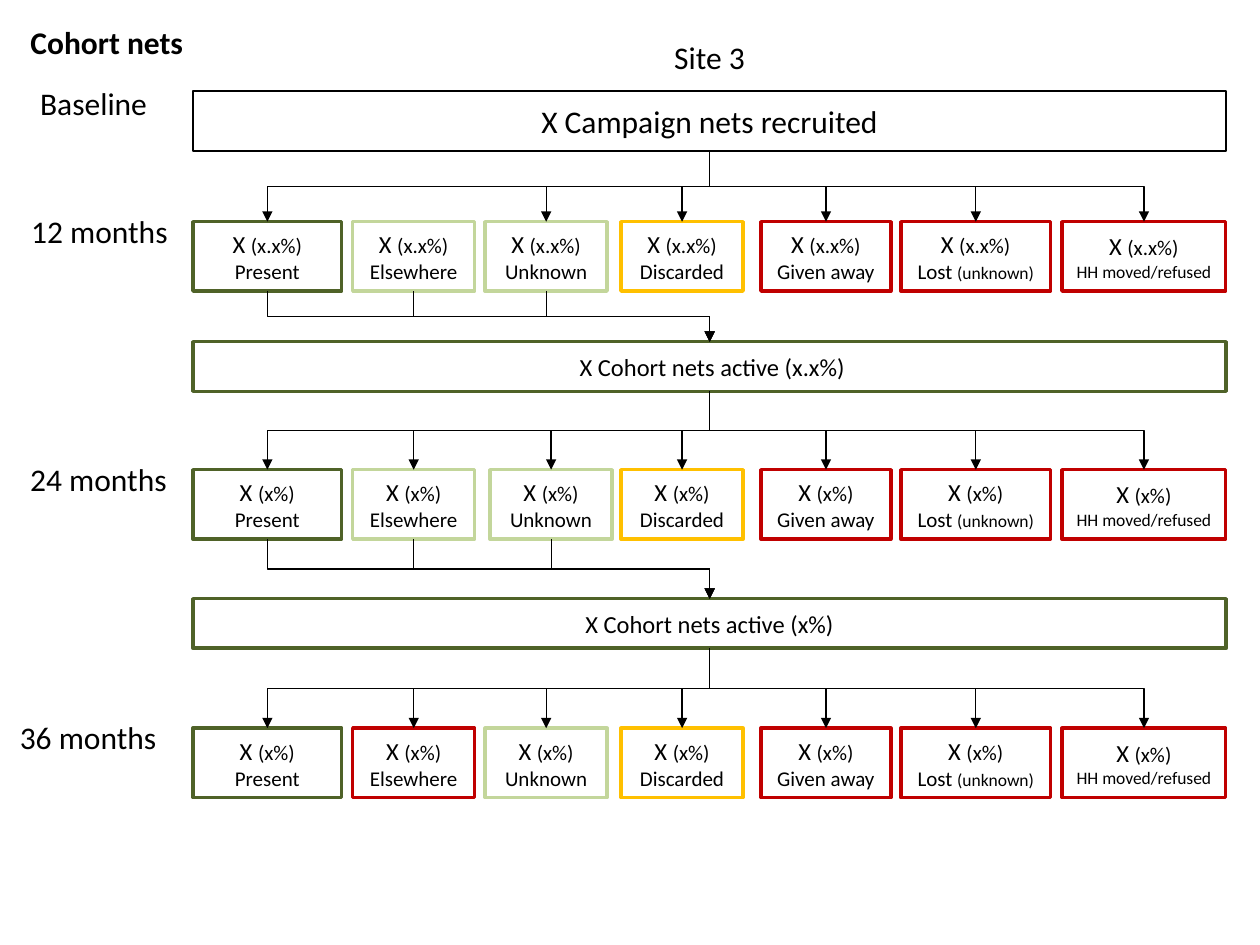
from lxml.etree import SubElement
from pptx import Presentation
from pptx.dml.color import RGBColor
from pptx.enum.shapes import MSO_CONNECTOR, MSO_SHAPE
from pptx.enum.text import MSO_ANCHOR, MSO_AUTO_SIZE, PP_ALIGN
from pptx.oxml.ns import qn
from pptx.util import Cm, Pt

THEME = {
    "font": "Calibri",
    "ink": "000000", "paper": "FFFFFF",
    "green": "4F6228", "light": "C3D69B", "gold": "FFC000", "red": "C00000",
    "head": 18, "count": 14, "label": 12, "small": 10,
    "thin": 0.75, "rule": 1, "frame": 2,
}

TITLE = "Cohort nets"
SITE = "Site 3"

# label runs (text, size), left, width, colour; lengths in cm
FATES = [
    ([("Present", "label")], 3.89, 3.0, "green"),
    ([("Elsewhere", "label")], 7.11, 2.46, "light"),
    ([("Unknown", "label")], 9.78, 2.46, "light"),
    ([("Discarded", "label")], 12.52, 2.46, "gold"),
    ([("Given away", "label")], 15.34, 2.62, "red"),
    ([("Lost ", "label"), ("(unknown)", "small")], 18.16, 3.02, "red"),
    ([("HH moved/refused", "small")], 21.41, 3.3, "red"),
]
ACTIVE = 3  # the first fates feed the next bar

# text, top, height, line colour, line width, type size
BARS = [
    ("X Campaign nets recruited", 1.83, 1.22, "ink", "rule", "head"),
    (" X Cohort nets active (x.x%)", 6.89, 1.0, "green", "frame", "count"),
    ("X Cohort nets active (x%)", 12.07, 1.0, "green", "frame", "count"),
]
# top, share, fates without an arrow, shifts in cm, colour changes
ROWS = [
    (4.47, "(x.x%)", {1}, {}, {}),
    (9.47, "(x%)", set(), {2: 0.1}, {}),
    (14.68, "(x%)", set(), {}, {1: "red"}),
]
TIMES = [("Baseline", 0.56, 1.57), ("12 months", 0.38, 4.14),
         ("24 months", 0.36, 9.14), ("36 months", 0.15, 14.35)]

LEFT, WIDE = 3.89, 20.83
MID = LEFT + WIDE / 2
TALL = 1.4


def tint(name):
    return RGBColor.from_string(THEME[name])


def write(frame, lines, align=PP_ALIGN.CENTER, bold=False):
    """Fill a frame; each line is a list of (text, size) runs."""
    frame.word_wrap = True
    for i, runs in enumerate(lines):
        para = frame.paragraphs[0] if i == 0 else frame.add_paragraph()
        para.alignment = align
        font = para.font
        font.name, font.bold = THEME["font"], bold
        font.color.rgb = tint("ink")
        font.size = Pt(THEME[runs[0][1]])
        for text, size in runs:
            run = para.add_run()
            run.text = text
            if len(runs) > 1:
                run.font.size = Pt(THEME[size])


def box(slide, x, y, w, h, color, width, lines):
    shape = slide.shapes.add_shape(MSO_SHAPE.RECTANGLE, Cm(x), Cm(y), Cm(w), Cm(h))
    shape.shadow.inherit = False
    shape.fill.solid()
    shape.fill.fore_color.rgb = tint("paper")
    shape.line.color.rgb = tint(color)
    shape.line.width = Pt(THEME[width])
    shape.text_frame.vertical_anchor = MSO_ANCHOR.MIDDLE
    write(shape.text_frame, lines)


def note(slide, text, x, y, w, align=PP_ALIGN.LEFT):
    area = slide.shapes.add_textbox(Cm(x), Cm(y), Cm(w), Cm(1.02))
    write(area.text_frame, [[(text, "head")]], align)


def arrow(slide, x1, y1, x2, y2):
    """Elbow that runs down, across and down: a sideways elbow, turned."""
    cx, cy = (x1 + x2) / 2, (y1 + y2) / 2
    right = x2 > x1
    dx = (y2 - y1) / 2 * (-1 if right else 1)
    dy = abs(x2 - x1) / 2
    link = slide.shapes.add_connector(
        MSO_CONNECTOR.ELBOW, Cm(cx - dx), Cm(cy - dy), Cm(cx + dx), Cm(cy + dy))
    link.line.color.rgb = tint("ink")
    link.line.width = Pt(THEME["thin"])
    props = link._element.spPr
    props.find(qn("a:xfrm")).set("rot", str((270 if right else 90) * 60000))
    SubElement(props.find(qn("a:ln")), qn("a:tailEnd"), type="triangle")
    SubElement(props, qn("a:effectLst"))


def main():
    deck = Presentation()
    deck.slide_width, deck.slide_height = Cm(25.4), Cm(19.05)
    slide = deck.slides.add_slide(deck.slide_layouts[5])

    title = slide.shapes.title
    title.left, title.top, title.width, title.height = Cm(0.36), Cm(0.33), Cm(3.94), Cm(1.02)
    title.text_frame.auto_size = MSO_AUTO_SIZE.NONE
    title.text_frame.vertical_anchor = MSO_ANCHOR.TOP
    write(title.text_frame, [[(TITLE, "head")]], PP_ALIGN.LEFT, True)

    note(slide, SITE, LEFT, 0.64, WIDE, PP_ALIGN.CENTER)
    for text, x, y in TIMES:
        note(slide, text, x, y, 3.6)
    for text, y, h, color, width, size in BARS:
        box(slide, LEFT, y, WIDE, h, color, width, [[(text, size)]])

    for r, (top, share, skip, shift, swap) in enumerate(ROWS):
        base = BARS[r][1] + BARS[r][2]
        for i, (label, x, w, color) in enumerate(FATES):
            x += shift.get(i, 0)
            box(slide, x, top, w, TALL, swap.get(i, color), "frame",
                [[("X ", "count"), (share, "label")], label])
            if i not in skip:
                arrow(slide, MID, base, x + w / 2, top)
            if i < ACTIVE and r + 1 < len(BARS):
                arrow(slide, x + w / 2, top + TALL, MID, BARS[r + 1][1])

    deck.save("out.pptx")


if __name__ == "__main__":
    main()
